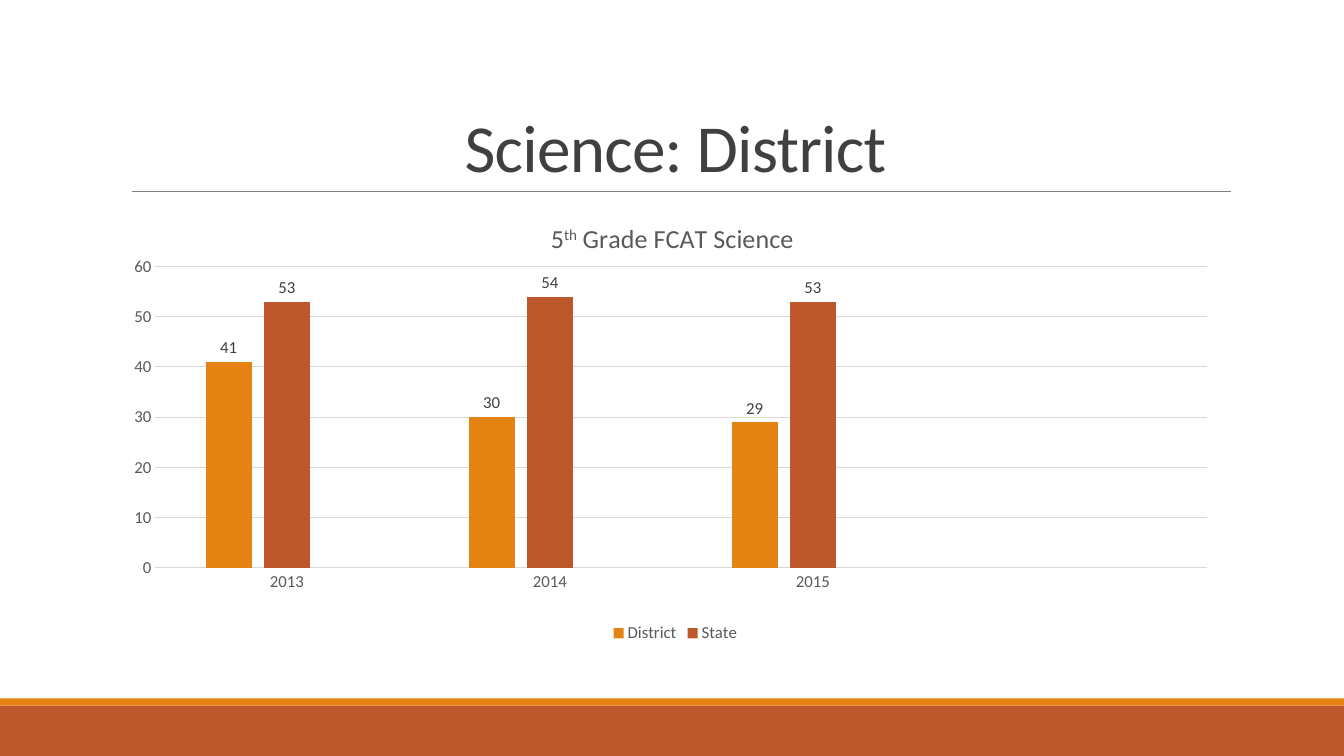
import pptx
import pptx.util
import pptx.chart.data
import pptx.dml.color
import pptx.enum.chart
import pptx.enum.shapes
import pptx.enum.text
import pptx.oxml
import pptx.oxml.ns
from lxml import etree

Cm, Pt = pptx.util.Cm, pptx.util.Pt
RGB = pptx.dml.color.RGBColor
kinds = pptx.enum.chart
qn = pptx.oxml.ns.qn

ORANGE = RGB(0xE4, 0x83, 0x12)
RUST = RGB(0xBD, 0x58, 0x2C)
BROWN = RGB(0x86, 0x56, 0x40)
DARK = RGB(0x40, 0x40, 0x40)
GRAY = RGB(0x59, 0x59, 0x59)
RULE = RGB(0x80, 0x80, 0x80)
PALE = RGB(0xD9, 0xD9, 0xD9)
FACE = "Calibri"

# Content
TITLE = "Science: District"
HEAD = [("5", None), ("th", "30000"), (" Grade FCAT Science ", None)]
YEARS = ["2013", "2014", "2015", ""]
SERIES = [
    ("District", [41, 30, 29, None], ORANGE),
    ("State", [53, 54, 53, None], RUST),
    ("Series 3", [None] * 4, BROWN),
]
HIDDEN = 2
PLOT = {"x": 0.031, "y": 0.142, "w": 0.949, "h": 0.679}
BANDS = [(17.78, 1.27, RUST), (17.6, 0.18, ORANGE)]
WIDE, HIGH = 33.87, 19.05
LEFT, SPAN = 3.05, 27.94


def style(font, size, color):
    font.name, font.size = FACE, Pt(size)
    font.color.rgb = color


def add(parent, tag, **attrs):
    return etree.SubElement(parent, qn(tag), attrs)


deck = pptx.Presentation()
deck.slide_width, deck.slide_height = Cm(WIDE), Cm(HIGH)
slide = deck.slides.add_slide(deck.slide_layouts[6])
shapes = slide.shapes

# Bottom bands
for top, high, color in BANDS:
    band = shapes.add_shape(pptx.enum.shapes.MSO_SHAPE.RECTANGLE,
                            0, Cm(top), Cm(WIDE), Cm(high))
    band.shadow.inherit = False
    band.fill.solid()
    band.fill.fore_color.rgb = color
    band.line.fill.background()

# Rule under the title
rule = shapes.add_connector(pptx.enum.shapes.MSO_CONNECTOR.STRAIGHT,
                            Cm(3.33), Cm(4.83), Cm(31.01), Cm(4.83))
rule.line.color.rgb = RULE
rule.line.width = Pt(0.5)
add(rule._element.spPr, "a:effectLst")

# Title
frame = shapes.add_textbox(Cm(LEFT), Cm(0.79), Cm(SPAN), Cm(4.04)).text_frame
frame.word_wrap = True
frame.vertical_anchor = pptx.enum.text.MSO_ANCHOR.BOTTOM
para = frame.paragraphs[0]
para.text = TITLE
para.alignment = pptx.enum.text.PP_ALIGN.CENTER
para.line_spacing = 0.85
style(para.font, 48, DARK)
para.runs[0]._r.get_or_add_rPr().set("spc", "-50")

# Chart
data = pptx.chart.data.CategoryChartData()
data.categories = YEARS
for name, vals, color in SERIES:
    data.add_series(name, vals)
chart = shapes.add_chart(kinds.XL_CHART_TYPE.COLUMN_CLUSTERED, Cm(LEFT), Cm(5.13),
                         Cm(SPAN), Cm(11.18), data).chart
chart.font.name, chart.font.size = FACE, Pt(10)

# Chart title
para = chart.chart_title.text_frame.paragraphs[0]
style(para.font, 18.6, GRAY)
para.font.bold = False
for text, raised in HEAD:
    run = para.add_run()
    run.text = text
    if raised:
        run._r.get_or_add_rPr().set("baseline", raised)
chart.chart_title.include_in_layout = False

# Columns and labels
plot = chart.plots[0]
plot.gap_width, plot.overlap = 219, -27
plot.vary_by_categories = False
for bars, (name, vals, color) in zip(plot.series, SERIES):
    bars.format.fill.solid()
    bars.format.fill.fore_color.rgb = color
    labels = bars.data_labels
    labels.show_value = True
    labels.position = kinds.XL_LABEL_POSITION.OUTSIDE_END
    style(labels.font, 12, DARK)

# Axes
years, scale = chart.category_axis, chart.value_axis
for axis in (years, scale):
    axis.major_tick_mark = axis.minor_tick_mark = kinds.XL_TICK_MARK.NONE
    style(axis.tick_labels.font, 12, GRAY)
scale.format.line.fill.background()
scale.has_major_gridlines = True
for line in (years.format.line, scale.major_gridlines.format.line):
    line.color.rgb = PALE
    line.width = Pt(0.75)

# Legend without the empty series
chart.has_legend = True
legend = chart.legend
legend.position = kinds.XL_LEGEND_POSITION.BOTTOM
legend.include_in_layout = False
style(legend.font, 12, GRAY)
entry = etree.Element(qn("c:legendEntry"))
add(entry, "c:idx", val=str(HIDDEN))
add(entry, "c:delete", val="1")
legend._element.insert(1, entry)

# Inner plot area
area = chart._chartSpace.chart.plotArea
for old in area.findall(qn("c:layout")):
    area.remove(old)
layout = etree.Element(qn("c:layout"))
manual = add(layout, "c:manualLayout")
add(manual, "c:layoutTarget", val="inner")
for key in "xy":
    add(manual, f"c:{key}Mode", val="edge")
for key, part in PLOT.items():
    add(manual, f"c:{key}", val=str(part))
area.insert(0, layout)

deck.save("out.pptx")
